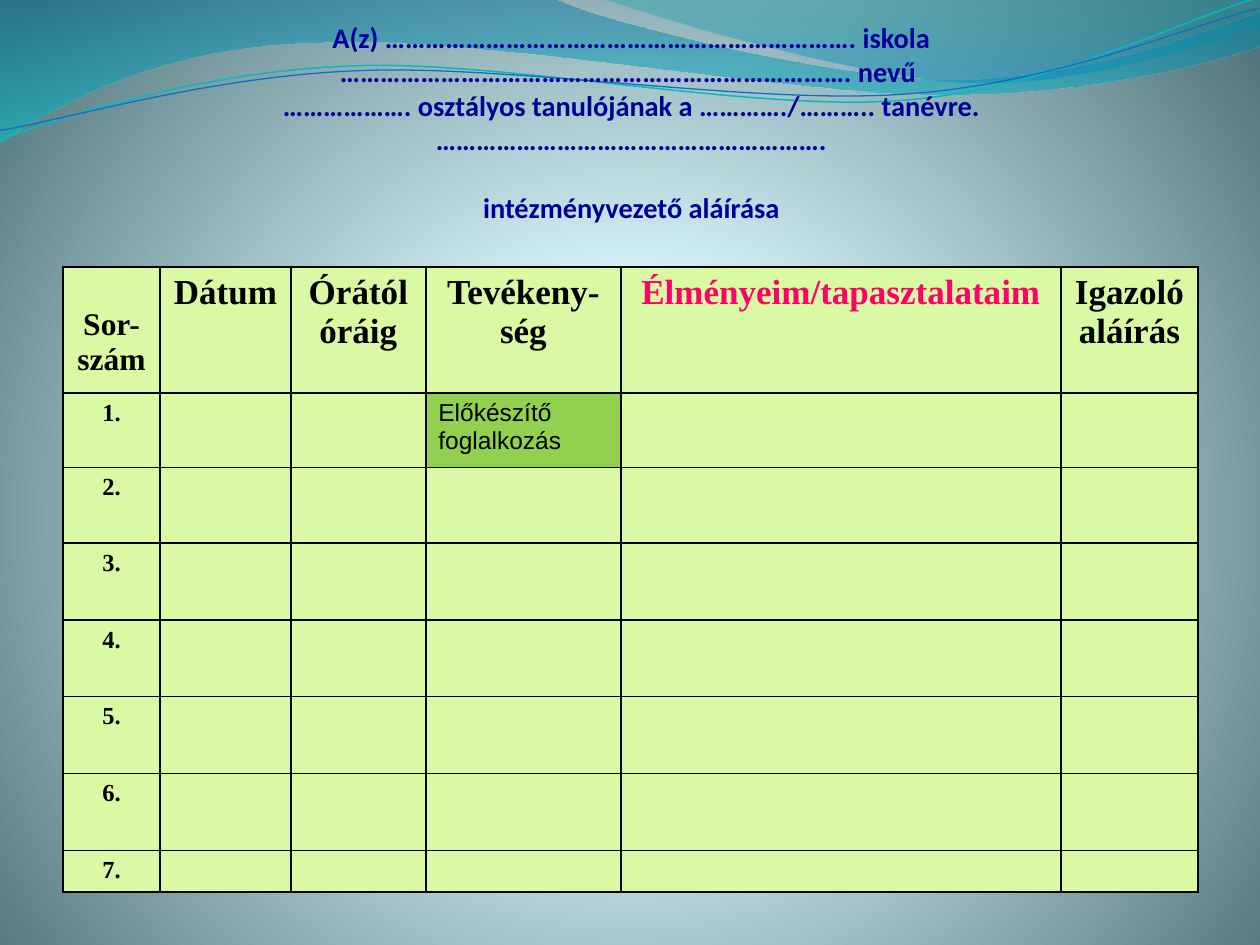
"""Builds the activity log slide: a header to fill in above a seven-row record table."""
from dataclasses import dataclass

from pptx import Presentation
from pptx.dml.color import RGBColor
from pptx.enum.text import MSO_ANCHOR, MSO_AUTO_SIZE, PP_ALIGN
from pptx.oxml import parse_xml
from pptx.oxml.ns import nsdecls, qn
from pptx.util import Inches, Pt


@dataclass(frozen=True)
class Theme:
    navy: str = "000099"
    black: str = "000000"
    pink: str = "FF0066"
    lime: str = "D9F9A5"
    green: str = "92D050"
    backdrop: tuple = ((0, "DEFBFF", 100), (25, "DDFAFF", 100), (100, "52767C", 100))
    wide_wave: tuple = ((0, "0074A1", 45), (100, "00C6CF", 55))
    right_wave: tuple = ((0, "00A1A9", 30), (80, "008BBF", 45))
    teal_line: str = "0AB8BF"
    blue_line: str = "0F6FC6"
    title_size: float = 16.2
    heading_size: float = 20
    number_heading_size: float = 18
    body_size: float = 14
    empty_size: float = 12


def paint_gradient(owner, stops, direction):
    gradient = next(owner.iter(qn("a:gradFill")))
    stop_xml = "".join(
        f'<a:gs pos="{pos * 1000}"><a:srgbClr val="{color}">'
        f'<a:alpha val="{alpha * 1000}"/></a:srgbClr></a:gs>'
        for pos, color, alpha in stops
    )
    gradient.getparent().replace(gradient, parse_xml(
        f'<a:gradFill {nsdecls("a")} rotWithShape="1">'
        f"<a:gsLst>{stop_xml}</a:gsLst>{direction}</a:gradFill>"
    ))


def draw_curve(shapes, start, segments, closed):
    points = [pair for segment in segments for pair in zip(segment[::2], segment[1::2])]
    builder = shapes.build_freeform(Inches(start[0]), Inches(start[1]))
    builder.add_line_segments([(Inches(x), Inches(y)) for x, y in points], close=closed)
    curve = builder.convert_to_shape()
    curve.shadow.inherit = False
    strokes = iter(list(curve._element.iter(qn("a:lnTo"))))
    for segment in segments:
        stroke = next(strokes)
        if len(segment) == 6:
            bezier = parse_xml(f'<a:cubicBezTo {nsdecls("a")}/>')
            stroke.addprevious(bezier)
            for part in (stroke, next(strokes), next(strokes)):
                bezier.append(part[0])
                part.getparent().remove(part)
    return curve


theme = Theme()
deck = Presentation()
deck.slide_width, deck.slide_height = Inches(10), Inches(7.5)
slide = deck.slides.add_slide(deck.slide_layouts[6])

slide.background.fill.gradient()
paint_gradient(
    slide._element, theme.backdrop,
    '<a:path path="circle"><a:fillToRect l="10000" t="110000" r="10000" b="100000"/></a:path>',
)

waves = [
    (theme.wide_wave, (0, -0.01), [
        (4.4, -0.01), (4.76, 0.17, 6.64, 0.63, 7.58, 0.63),
        (8.53, 0.63, 9.58, 0.26, 10, 0.09), (10.01, 0.36),
        (9.83, 0.44, 8.7, 0.76, 7.46, 0.75), (6.22, 0.75, 3.82, 0.28, 2.57, 0.34),
        (1.29, 0.35, 0.46, 0.83, -0.01, 1.13), (0, -0.01)]),
    (theme.right_wave, (4.79, -0.01), [
        (5.09, 0.11, 6.82, 0.62, 7.69, 0.65),
        (8.56, 0.69, 9.61, 0.32, 10, 0.21), (10, 0), (4.79, -0.01)]),
]
for stops, start, segments in waves:
    wave = draw_curve(slide.shapes, start, segments, True)
    wave.line.fill.background()
    wave.fill.gradient()
    paint_gradient(wave._element, stops, '<a:lin ang="5400000" scaled="1"/>')

ripples = [
    (theme.teal_line, 0.85, (-0.02, 0.87), [
        (0.47, 0.72, 1.58, 0.41, 2.78, 0.42), (3.96, 0.42, 5.91, 0.93, 7.12, 0.9),
        (8.32, 0.87, 9.4, 0.36, 10, 0.22)]),
    (theme.blue_line, 0.75, (-0.02, 0.8), [
        (0.46, 0.75, 1.64, 0.45, 2.83, 0.46), (4.03, 0.46, 5.96, 0.88, 7.16, 0.85),
        (8.35, 0.83, 9.42, 0.42, 10.01, 0.3)]),
]
for color, width, start, segments in ripples:
    ripple = draw_curve(slide.shapes, start, segments, False)
    ripple.rotation = 357.3
    ripple.fill.background()
    ripple.line.color.rgb = RGBColor.from_string(color)
    ripple.line.width = Pt(width)

header = slide.shapes.add_textbox(Inches(0.51), Inches(0.28), Inches(9), Inches(1.65)).text_frame
header.word_wrap = True
header.auto_size = MSO_AUTO_SIZE.NONE
header.vertical_anchor = MSO_ANCHOR.BOTTOM
header.margin_left = header.margin_right = header.margin_top = 0
header.margin_bottom = Inches(0.15)
form_lines = "\v".join([
    "A(z) ……………………………………………………………. iskola",
    "…………………………………………………………………. nevű ",
    "………………. osztályos tanulójának a …………./……….. tanévre.",
    "………………………………………………….",
])
header.text = form_lines + "\nintézményvezető aláírása"
for paragraph in header.paragraphs:
    paragraph.alignment = PP_ALIGN.CENTER
    for run in paragraph.runs:
        run.font.name, run.font.size, run.font.bold = "Calibri", Pt(theme.title_size), True
        run.font.color.rgb = RGBColor.from_string(theme.navy)
header.paragraphs[-1].space_before = Pt(19.5)

headings = ["Sor-szám", "Dátum", "Órától óráig", "Tevékeny-ség",
            "Élményeim/tapasztalataim", "Igazoló aláírás"]
records = [[f"{number}."] + [""] * 5 for number in range(1, 8)]
records[0][3] = "Előkészítő foglalkozás"
column_widths = [0.77, 1.04, 1.07, 1.55, 3.49, 1.09]
row_heights = [1, 0.59, 0.6] + [0.61] * 4 + [0.33]

log = slide.shapes.add_table(
    len(row_heights), len(column_widths), Inches(0.5), Inches(2.12), Inches(9), Inches(4.96)
).table
log.first_row = log.horz_banding = False
for column, width in zip(log.columns, column_widths):
    column.width = Inches(width)
for row, height in zip(log.rows, row_heights):
    row.height = Inches(height)

for r, texts in enumerate([headings] + records):
    for c, text in enumerate(texts):
        cell = log.cell(r, c)
        activity = r == 1 and c == 3
        properties = cell._tc.get_or_add_tcPr()
        for side in ("lnL", "lnR", "lnT", "lnB"):
            properties.append(parse_xml(
                f'<a:{side} {nsdecls("a")} w="12700"><a:solidFill>'
                f'<a:srgbClr val="{theme.black}"/></a:solidFill></a:{side}>'
            ))
        cell.fill.solid()
        cell.fill.fore_color.rgb = RGBColor.from_string(theme.green if activity else theme.lime)
        paragraph = cell.text_frame.paragraphs[0]
        if not text:
            paragraph._p.get_or_add_endParaRPr().set("sz", str(theme.empty_size * 100))
            continue
        paragraph.text = text
        paragraph.alignment = PP_ALIGN.LEFT if activity else PP_ALIGN.CENTER
        font = paragraph.runs[0].font
        font.name = "Arial" if activity else "Times New Roman"
        font.bold = not activity
        font.size = Pt(theme.body_size if r else theme.heading_size)
        font.color.rgb = RGBColor.from_string(theme.pink if (r, c) == (0, 4) else theme.black)

number_heading = log.cell(0, 0)
number_heading.margin_top = Inches(0.32)
number_heading.text_frame.paragraphs[0].runs[0].font.size = Pt(theme.number_heading_size)

deck.save("out.pptx")
